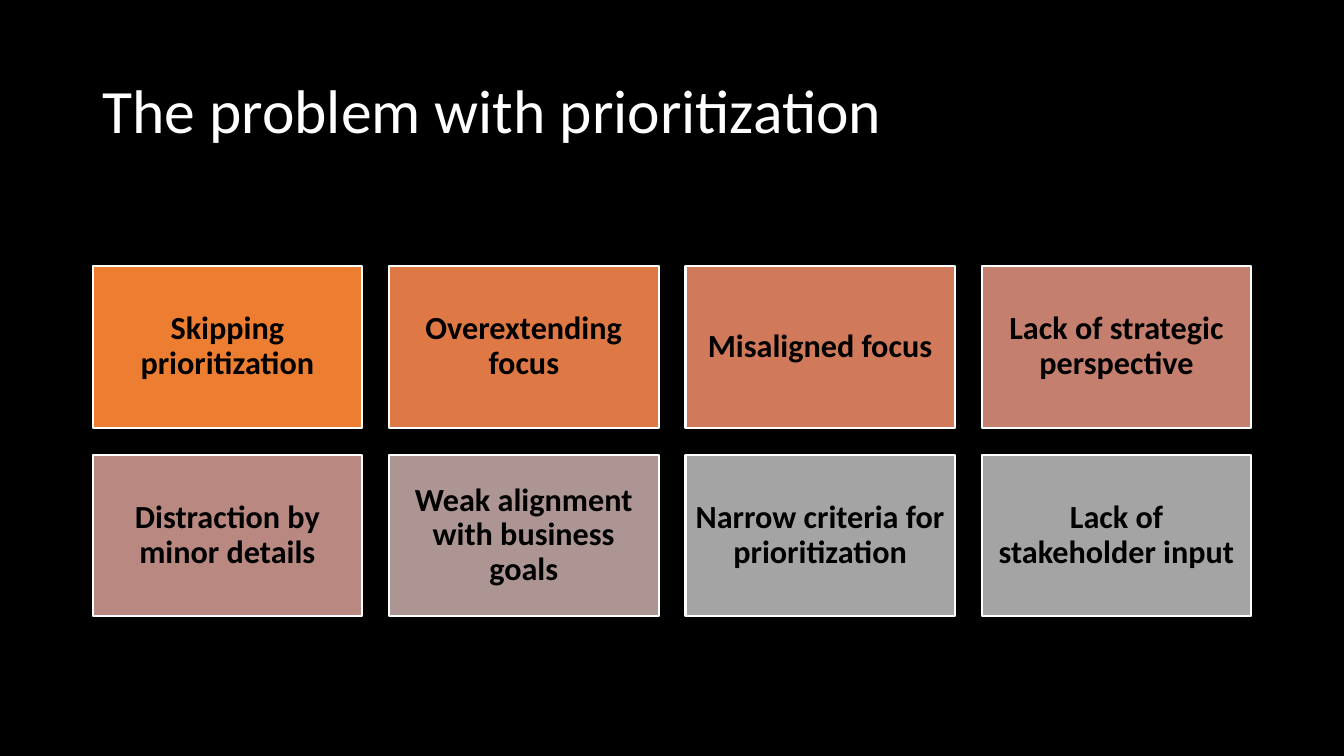
from dataclasses import dataclass

from pptx import Presentation
from pptx.dml.color import RGBColor
from pptx.enum.shapes import MSO_SHAPE
from pptx.enum.text import MSO_ANCHOR, PP_ALIGN
from pptx.util import Pt


@dataclass(frozen=True)
class Theme:
    font: str = "Calibri"
    black: str = "000000"
    white: str = "FFFFFF"
    title_size: int = 44
    card_size: int = 23


theme = Theme()


def write_text(frame, text, size, color, alignment, bold=False):
    frame.word_wrap = True
    frame.vertical_anchor = MSO_ANCHOR.MIDDLE
    para = frame.paragraphs[0]
    para.alignment = alignment
    para.line_spacing = 0.9
    span = para.add_run()
    span.text = text
    span.font.name = theme.font
    span.font.size = Pt(size)
    span.font.bold = bold
    span.font.color.rgb = RGBColor.from_string(color)


deck = Presentation()
deck.slide_width, deck.slide_height = Pt(960), Pt(540)
page = deck.slides.add_slide(deck.slide_layouts[5])
page.background.fill.solid()
page.background.fill.fore_color.rgb = RGBColor.from_string(theme.black)

title = page.shapes.title
title.left, title.top, title.width, title.height = Pt(66), Pt(28.75), Pt(828), Pt(104.4)
write_text(title.text_frame, "The problem with prioritization",
           theme.title_size, theme.white, PP_ALIGN.LEFT)

problems = [
    ("Skipping prioritization", "ED7D31"),
    ("Overextending focus", "DE7946"),
    ("Misaligned focus", "D07A5B"),
    ("Lack of strategic perspective", "C47F6E"),
    ("Distraction by minor details", "B88881"),
    ("Weak alignment with business goals", "AD9593"),
    ("Narrow criteria for prioritization", "A4A4A4"),
    ("Lack of stakeholder input", "A4A4A4"),
]
columns = 4
grid_left, grid_top = 66.25, 190
card_width, card_height, gap = 192.5, 115.5, 19.2

for index, (problem, color) in enumerate(problems):
    row, column = divmod(index, columns)
    card = page.shapes.add_shape(
        MSO_SHAPE.RECTANGLE,
        Pt(grid_left + column * (card_width + gap)),
        Pt(grid_top + row * (card_height + gap)),
        Pt(card_width), Pt(card_height))
    card.shadow.inherit = False
    card.fill.solid()
    card.fill.fore_color.rgb = RGBColor.from_string(color)
    card.line.color.rgb = RGBColor.from_string(theme.white)
    card.line.width = Pt(1.5)
    frame = card.text_frame
    frame.margin_left = frame.margin_right = Pt(7)
    frame.margin_top = frame.margin_bottom = Pt(7)
    write_text(frame, problem, theme.card_size, theme.black, PP_ALIGN.CENTER, bold=True)

deck.save("out.pptx")
